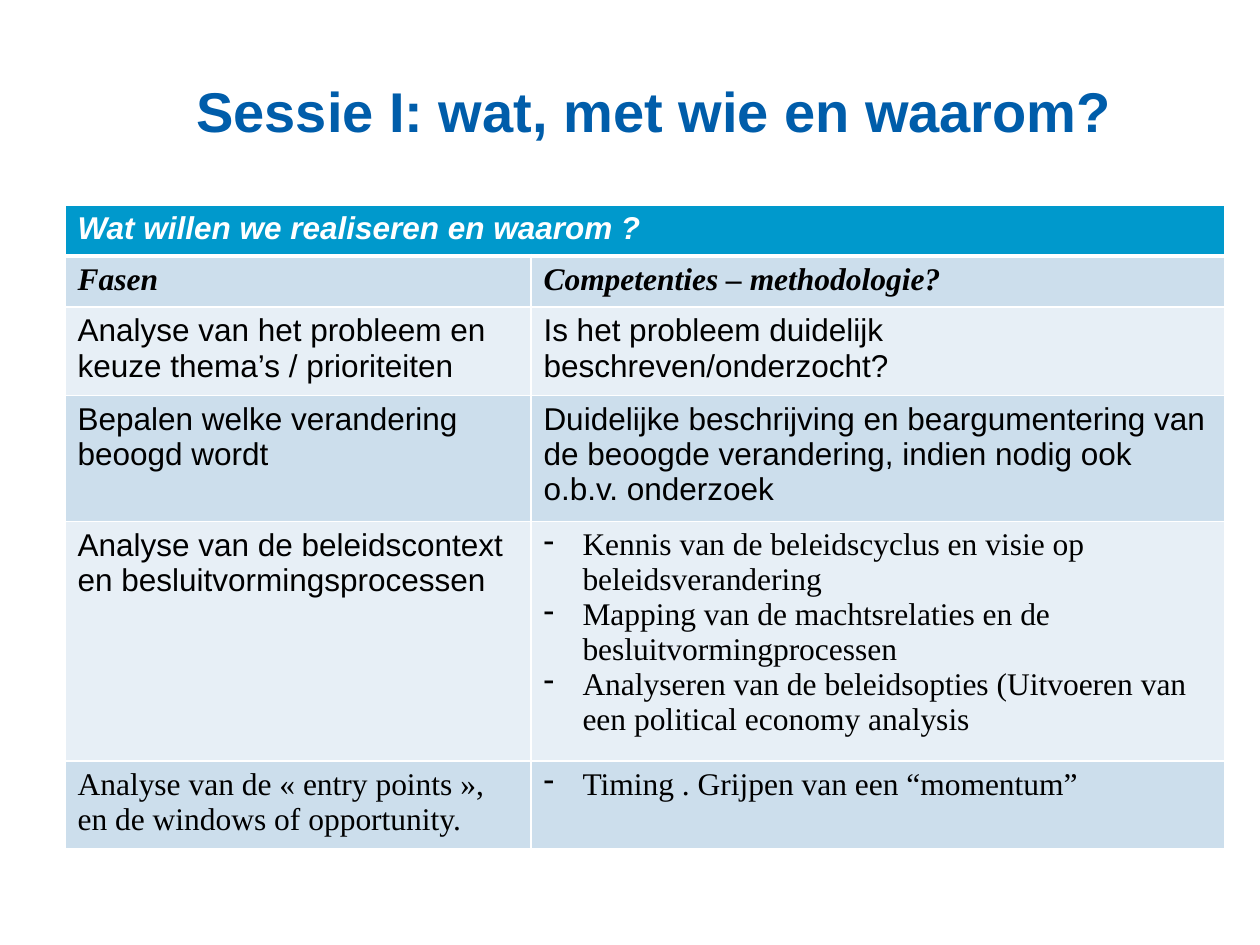
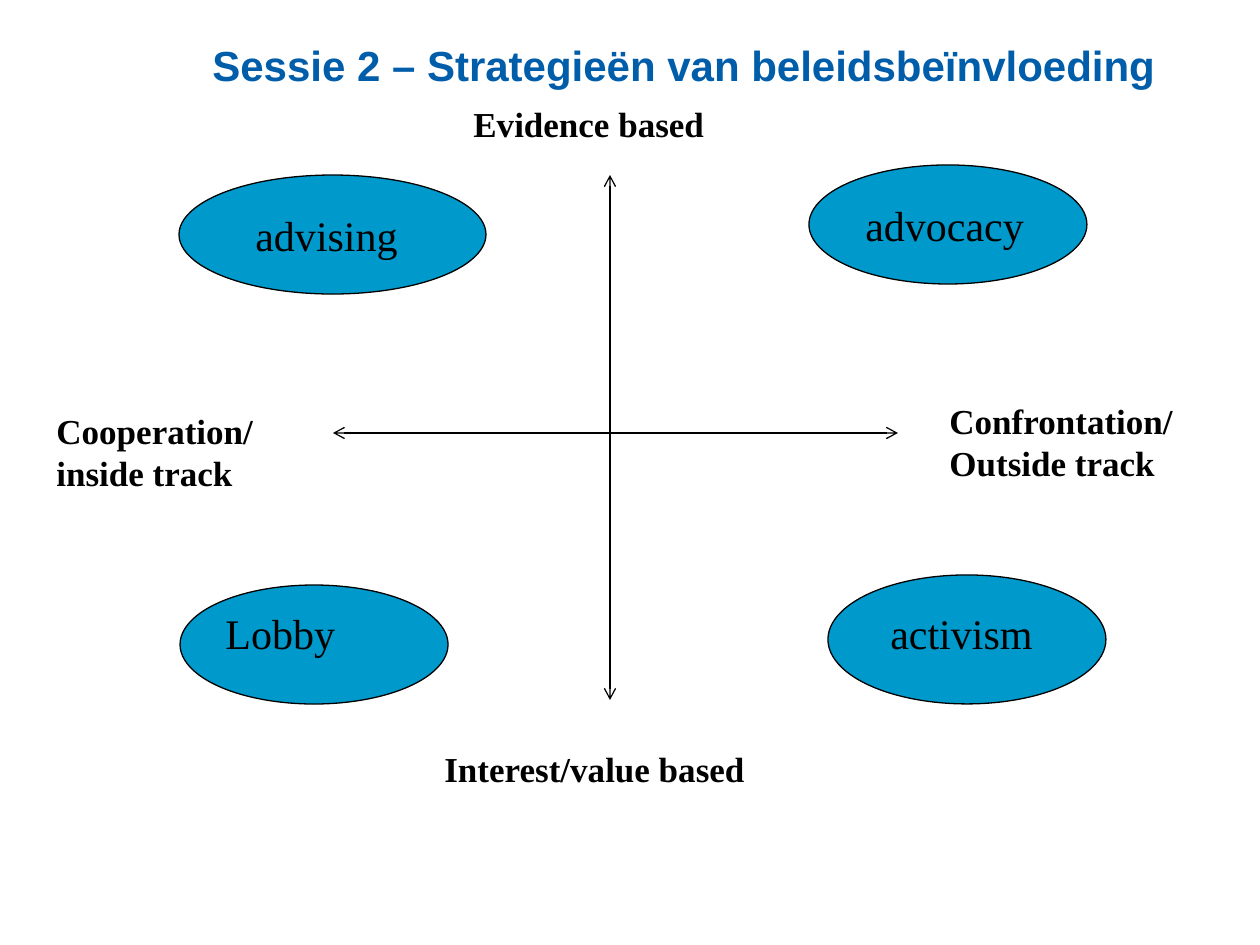
"""Build two slides on policy influencing: a phase table and a strategy quadrant."""
import pptx
import pptx.util
import pptx.dml.color
import pptx.enum.shapes
import pptx.enum.text
import pptx.oxml.ns
import lxml.etree

TITLE_BLUE = pptx.dml.color.RGBColor(0x00, 0x5D, 0xAA)
CYAN = pptx.dml.color.RGBColor(0x00, 0x99, 0xCC)
BAND_DARK = pptx.dml.color.RGBColor(0xCC, 0xDE, 0xEC)
BAND_LIGHT = pptx.dml.color.RGBColor(0xE7, 0xEF, 0xF6)
WHITE = pptx.dml.color.RGBColor(0xFF, 0xFF, 0xFF)
BLACK = pptx.dml.color.RGBColor(0x00, 0x00, 0x00)
SANS = "Arial"
SERIF = "Times New Roman"
qn = pptx.oxml.ns.qn


def px(length):
    return pptx.util.Emu(round(length * 914400 / 126))


def add_text(slide, box, lines, size, font=SERIF, color=BLACK, bold=False, anchor="TOP"):
    frame = slide.shapes.add_textbox(*map(px, box)).text_frame
    frame.word_wrap = True
    frame.vertical_anchor = pptx.enum.text.MSO_ANCHOR[anchor]
    for index, line in enumerate(lines):
        paragraph = frame.add_paragraph() if index else frame.paragraphs[0]
        run = paragraph.add_run()
        run.text = line
        run.font.name = font
        run.font.size = pptx.util.Pt(size)
        run.font.bold = bold
        run.font.color.rgb = color


deck = pptx.Presentation()
deck.slide_width, deck.slide_height = px(1260), px(945)
phases, strategies = [deck.slides.add_slide(deck.slide_layouts[6]) for _ in range(2)]
for slide, box, title, size in [
    (phases, (184, 55, 1076, 95), "Sessie I: wat, met wie en waarom?", 32),
    (strategies, (200, 1, 1034, 95), "Sessie 2 – Strategieën van beleidsbeïnvloeding", 24),
]:
    add_text(slide, box, [title], size, SANS, TITLE_BLUE, True, "BOTTOM")

phase_rows = [
    (51, [(SANS, ["Wat willen we realiseren en waarom ?"]), (SANS, [])]),
    (51, [(SERIF, ["Fasen"]), (SERIF, ["Competenties – methodologie?"])]),
    (83, [(SANS, ["Analyse van het probleem en keuze thema’s / prioriteiten"]),
          (SANS, ["Is het probleem duidelijk beschreven/onderzocht?"])]),
    (118, [(SANS, ["Bepalen welke verandering beoogd wordt"]),
           (SANS, ["Duidelijke beschrijving en beargumentering van de beoogde verandering, "
                   "indien nodig ook o.b.v. onderzoek"])]),
    (222, [(SANS, ["Analyse van de beleidscontext en besluitvormingsprocessen"]),
           (SERIF, ["Kennis van de beleidscyclus en visie op beleidsverandering",
                    "Mapping van de machtsrelaties en de besluitvormingprocessen",
                    "Analyseren van de beleidsopties (Uitvoeren van een political economy analysis"])]),
    (82, [(SERIF, ["Analyse van de « entry points », en de windows of opportunity."]),
          (SERIF, ["Timing . Grijpen van een “momentum”"])]),
]
phase_table = phases.shapes.add_table(
    len(phase_rows), 2, px(65), px(205), px(1160), px(607)).table
for column, width in zip(phase_table.columns, (466, 694)):
    column.width = px(width)
phase_table.cell(0, 0).merge(phase_table.cell(0, 1))
for row, (height, cells) in enumerate(phase_rows):
    phase_table.rows[row].height = px(height)
    for col, (font, lines) in enumerate(cells):
        cell = phase_table.cell(row, col)
        cell.fill.solid()
        cell.fill.fore_color.rgb = CYAN if row == 0 else BAND_DARK if row % 2 else BAND_LIGHT
        properties = cell._tc.get_or_add_tcPr()
        for position, side in enumerate("LRTB"):
            thick = (row, side) in [(0, "B"), (1, "T")]
            border = lxml.etree.Element(qn(f"a:ln{side}"), w=str(pptx.util.Pt(3 if thick else 1)))
            fill = lxml.etree.SubElement(border, qn("a:solidFill"))
            lxml.etree.SubElement(fill, qn("a:srgbClr"), val=str(WHITE))
            properties.insert(position, border)
        for index, line in enumerate(lines):
            frame = cell.text_frame
            paragraph = frame.add_paragraph() if index else frame.paragraphs[0]
            if row >= 4 and col == 1:
                bullet = paragraph._p.get_or_add_pPr()
                bullet.set("marL", str(px(39)))
                bullet.set("indent", str(-px(39)))
                lxml.etree.SubElement(bullet, qn("a:buChar"), char="-")
            run = paragraph.add_run()
            run.text = line
            run.font.name = font
            run.font.size = pptx.util.Pt(18)
            run.font.bold = run.font.italic = row < 2
            run.font.color.rgb = WHITE if row == 0 else BLACK

center = (610, 433)
for axis_end in [(610, 700), (610, 175), (898, 433), (333, 433)]:
    axis = strategies.shapes.add_connector(
        pptx.enum.shapes.MSO_CONNECTOR.STRAIGHT, *map(px, center + axis_end))
    axis.line.color.rgb = BLACK
    axis.line.width = pptx.util.Pt(0.75)
    lxml.etree.SubElement(axis.line._get_or_add_ln(), qn("a:tailEnd"), type="arrow")
    lxml.etree.SubElement(axis._element.spPr, qn("a:effectLst"))

for box, lines in [
    ((461, 96, 328, 55), ["Evidence based"]),
    ((432, 741, 427, 55), ["Interest/value based"]),
    ((937, 393, 297, 149), ["Confrontation/", "Outside track"]),
    ((44, 403, 258, 97), ["Cooperation/ inside track"]),
]:
    add_text(strategies, box, lines, 20, bold=True)

for oval_box, label_box, strategy in [
    ((809, 165, 278, 119), (853, 193, 189, 63), "advocacy"),
    ((179, 175, 307, 119), (243, 203, 189, 63), "advising"),
    ((828, 575, 278, 129), (878, 601, 189, 63), "activism"),
    ((180, 585, 268, 119), (213, 601, 198, 63), "Lobby"),
]:
    oval = strategies.shapes.add_shape(
        pptx.enum.shapes.MSO_SHAPE.OVAL, *map(px, oval_box))
    oval.shadow.inherit = False
    oval.fill.solid()
    oval.fill.fore_color.rgb = CYAN
    oval.line.color.rgb = BLACK
    oval.line.width = pptx.util.Pt(0.75)
    add_text(strategies, label_box, [strategy], 24)

deck.save("out.pptx")
